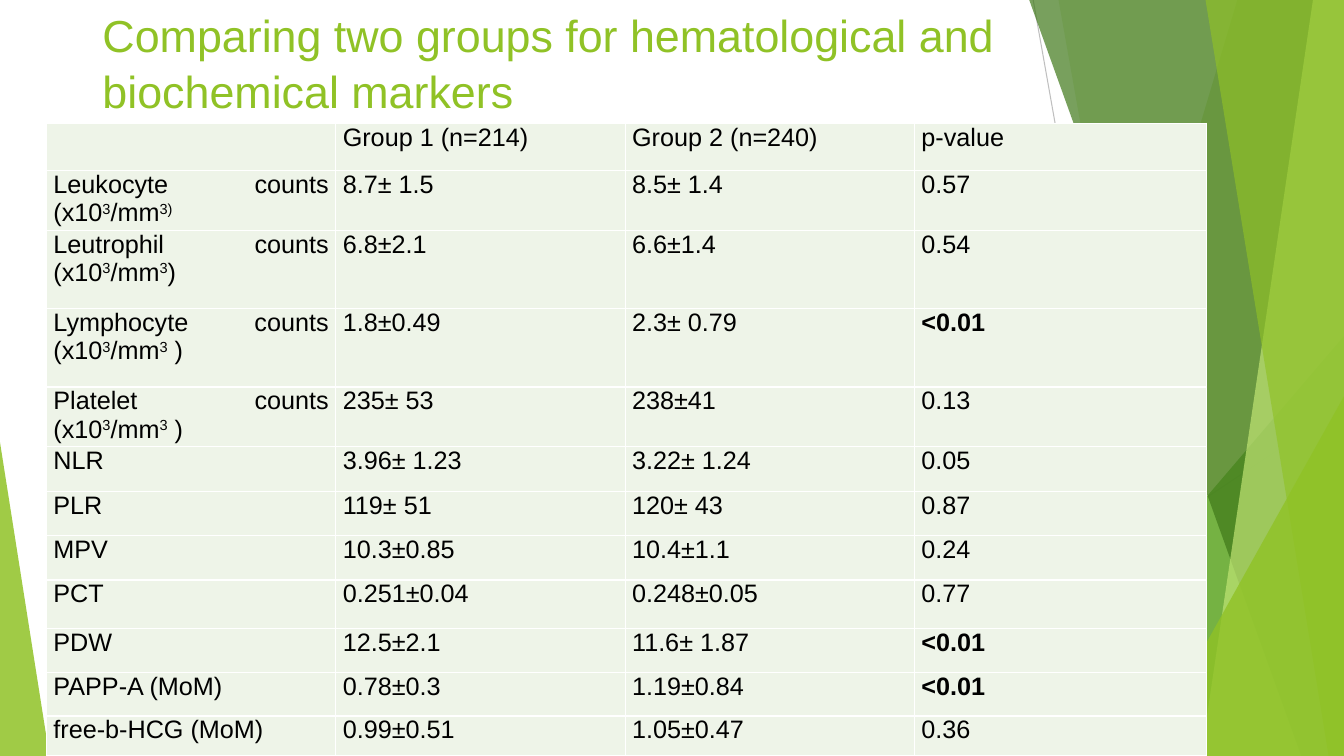
from lxml.etree import SubElement
from pptx import Presentation
from pptx.dml.color import RGBColor
from pptx.enum.shapes import MSO_CONNECTOR as CONN, MSO_SHAPE as SHAPE
from pptx.enum.text import MSO_ANCHOR as ANCHOR, MSO_AUTO_SIZE as FIT, PP_ALIGN as ALIGN
from pptx.oxml.ns import qn
from pptx.util import Pt


def rgb(value):
    return RGBColor.from_string(value)


def write(p, text, size=18, color="000000", bold=False, align=ALIGN.JUSTIFY):
    """Fill a paragraph; parts between ^ marks are superscript."""
    p.alignment = align
    for i, part in enumerate(text.split("^")):
        if part:
            r = p.add_run()
            r.text = part
            r.font.name, r.font.size, r.font.bold = "Arial", Pt(size), bold
            r.font.color.rgb = rgb(color)
            if i % 2:
                r._r.get_or_add_rPr().set("baseline", "30000")


prs = Presentation()
prs.slide_width, prs.slide_height = Pt(960), Pt(540)
s = prs.slides.add_slide(prs.slide_layouts[5])

# Thin background lines
for x1, y1, x2, y2, color in [(738, 0, 834, 540, "BFBFBF"),
                              (960, 290, 584.6, 540, "D9D9D9")]:
    line = s.shapes.add_connector(CONN.STRAIGHT, Pt(x1), Pt(y1), Pt(x2), Pt(y2))
    line.line.color.rgb = rgb(color)
    line.line.width = Pt(0.75)
    SubElement(line._element.spPr, qn("a:effectLst"))

# Green facets: bands (top x, bottom x) reach the right edge,
# triangles (left, top, width, apex) reach the bottom edge
facets = [
    ((884, 723), "90C226", 30),
    ((756, 852), "90C226", 20),
    ((703.6, 240, 256.4, 1), "54A021", 72),
    ((735, 929.5), "3F7819", 70),
    ((938, 858), "C0E474", 70),
    ((861, 949), "90C226", 65),
    ((816.6, 283, 143.4, 1), "90C226", 80),
    ((0, 316, 35.3, 0), "90C226", 85),
]
for geometry, color, opacity in facets:
    if len(geometry) == 2:
        top_x, bottom_x = geometry
        band = s.shapes.build_freeform(Pt(top_x), Pt(-0.6))
        band.add_line_segments([(Pt(960), Pt(-0.6)), (Pt(960), Pt(540)),
                                (Pt(bottom_x), Pt(540))])
        sp = band.convert_to_shape()
    else:
        left, top, width, apex = geometry
        sp = s.shapes.add_shape(SHAPE.ISOSCELES_TRIANGLE, Pt(left), Pt(top),
                                Pt(width), Pt(540 - top))
        sp.adjustments[0] = apex
    sp.shadow.inherit = False
    sp.fill.solid()
    sp.fill.fore_color.rgb = rgb(color)
    sp.line.fill.background()
    clr = sp._element.spPr.find(qn("a:solidFill"))[0]
    SubElement(clr, qn("a:alpha"), val=str(opacity * 1000))

# Title, in front of the facets
title = s.shapes.title
s.shapes._spTree.append(title._element)
title.left, title.top, title.width, title.height = Pt(66), Pt(0), Pt(828), Pt(96)
tf = title.text_frame
tf.word_wrap = True
tf.auto_size = FIT.NONE
tf.vertical_anchor = ANCHOR.TOP
tf.margin_right = Pt(20)
p = tf.paragraphs[0]
p.line_spacing = 1.05
write(p, "Comparing two groups for hematological and biochemical markers",
      size=32, color="90C226", align=ALIGN.LEFT)

# Table of markers: row height, then the cells
rows = [
    (34, "", "Group 1 (n=214)", "Group 2 (n=240)", "p-value"),
    (42.5, "Leukocyte counts (x10^3^/mm^3)^", "8.7± 1.5", "8.5± 1.4", "0.57"),
    (56, "Leutrophil counts (x10^3^/mm^3^)", "6.8±2.1", "6.6±1.4", "0.54"),
    (56, "Lymphocyte counts (x10^3^/mm^3^ )", "1.8±0.49", "2.3± 0.79", "<0.01"),
    (42.5, "Platelet counts (x10^3^/mm^3^ )", "235± 53", "238±41", "0.13"),
    (32.2, "NLR", "3.96± 1.23", "3.22± 1.24", "0.05"),
    (31.6, "PLR", "119± 51", "120± 43", "0.87"),
    (31.6, "MPV", "10.3±0.85", "10.4±1.1", "0.24"),
    (34.6, "PCT", "0.251±0.04", "0.248±0.05", "0.77"),
    (31.6, "PDW", "12.5±2.1", "11.6± 1.87", "<0.01"),
    (31, "PAPP-A (MoM)", "0.78±0.3", "1.19±0.84", "<0.01"),
    (28, "free-b-HCG (MoM)", "0.99±0.51", "1.05±0.47", "0.36"),
]
col_widths = [206.7, 206.7, 206.7, 208.8]
table = s.shapes.add_table(len(rows), len(col_widths), Pt(33.2), Pt(88),
                           Pt(sum(col_widths)), Pt(sum(r[0] for r in rows))).table
table.first_row = table.horz_banding = False
for column, width in zip(table.columns, col_widths):
    column.width = Pt(width)
for row, (height, *texts) in zip(table.rows, rows):
    row.height = Pt(height)
    for cell, text in zip(row.cells, texts):
        cell.margin_left = cell.margin_right = Pt(5)
        cell.margin_top = cell.margin_bottom = 0
        tcPr = cell._tc.get_or_add_tcPr()
        for side in ("a:lnL", "a:lnR", "a:lnT", "a:lnB"):
            ln = SubElement(tcPr, qn(side), w=str(Pt(1)))
            SubElement(SubElement(ln, qn("a:solidFill")), qn("a:srgbClr"), val="FFFFFF")
        cell.fill.solid()
        cell.fill.fore_color.rgb = rgb("EEF4E8")
        write(cell.text_frame.paragraphs[0], text, bold=text.startswith("<"))

prs.save("out.pptx")
